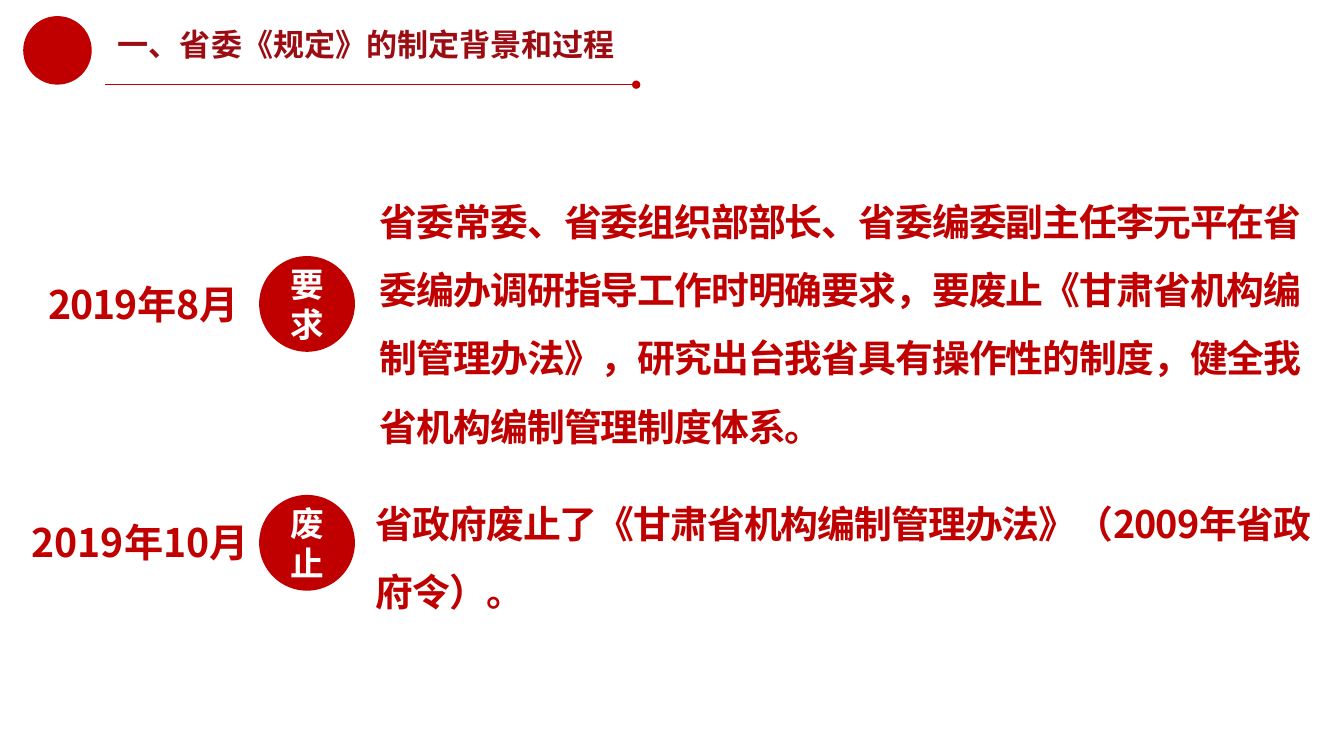
from lxml.etree import SubElement
from pptx import Presentation
from pptx.dml.color import RGBColor
from pptx.enum.shapes import MSO_CONNECTOR as Line, MSO_SHAPE as Kind
from pptx.enum.text import MSO_ANCHOR as Anchor, PP_ALIGN as Align
from pptx.oxml.ns import qn
from pptx.util import Inches, Pt

FONT = "Noto Sans CJK SC"
RED = "C00000"


def color(code):
    return RGBColor.from_string(code)


def write(shape, text, size=28, ink=RED, align=Align.LEFT, lead=1.0, gap=0, anchor=Anchor.TOP):
    frame = shape.text_frame
    frame.word_wrap = True
    frame.vertical_anchor = anchor
    para = frame.paragraphs[0]
    para.alignment = align
    para.line_spacing = lead
    run = para.add_run()
    run.text = text
    run.font.size = Pt(size)
    run.font.bold = True
    run.font.color.rgb = color(ink)
    run.font.name = FONT
    props = run.font._element
    SubElement(props, qn("a:ea")).set("typeface", FONT)
    if gap:
        props.set("spc", str(int(gap * 100)))


deck = Presentation()
deck.slide_width = Inches(13.33)
deck.slide_height = Inches(7.5)
slide = deck.slides.add_slide(deck.slide_layouts[6])
shapes = slide.shapes

rule = shapes.add_connector(Line.STRAIGHT, Inches(1.04), Inches(0.84), Inches(6.31), Inches(0.84))
rule.line.color.rgb = color(RED)
rule.line.width = Pt(0.75)
SubElement(rule.line._get_or_add_ln(), qn("a:tailEnd")).set("type", "oval")
SubElement(rule._element.spPr, qn("a:effectLst"))

title = shapes.add_textbox(Inches(1.07), Inches(0.25), Inches(5.5), Inches(0.6))
write(title, "一、省委《规定》的制定背景和过程", size=22.2, ink="9B0D13", lead=0.9)

dates = [
    ("2019年8月", 0.38, 2.73, 2.13, Align.LEFT, -0.7),
    ("2019年10月", 0.17, 5.09, 2.44, Align.CENTER, 0),
]
for text, left, top, width, align, gap in dates:
    box = shapes.add_textbox(Inches(left), Inches(top), Inches(width), Inches(0.57))
    write(box, text, align=align, gap=gap)

notes = [
    ("省委常委、省委组织部部长、省委编委副主任李元平在省委编办调研指导工作时明确要求，"
     "要废止《甘肃省机构编制管理办法》，研究出台我省具有操作性的制度，"
     "健全我省机构编制管理制度体系。", 3.67, 1.7, 9.67, 2.83),
    ("省政府废止了《甘肃省机构编制管理办法》（2009年省政府令）。", 3.63, 4.69, 9.47, 1.46),
]
for text, left, top, width, height in notes:
    box = shapes.add_textbox(Inches(left), Inches(top), Inches(width), Inches(height))
    write(box, text, size=27, lead=1.5, gap=-0.7)

discs = [("", 0.23, 0.16, 0.68), ("要求", 2.57, 2.54, 0.95), ("废止", 2.57, 4.91, 0.95)]
for text, left, top, size in discs:
    disc = shapes.add_shape(Kind.OVAL, Inches(left), Inches(top), Inches(size), Inches(size))
    disc.shadow.inherit = False
    disc.fill.solid()
    disc.fill.fore_color.rgb = color(RED)
    disc.line.fill.background()
    if text:
        write(disc, text, size=24, ink="FFFFFF", align=Align.CENTER, anchor=Anchor.MIDDLE)

deck.save("out.pptx")
